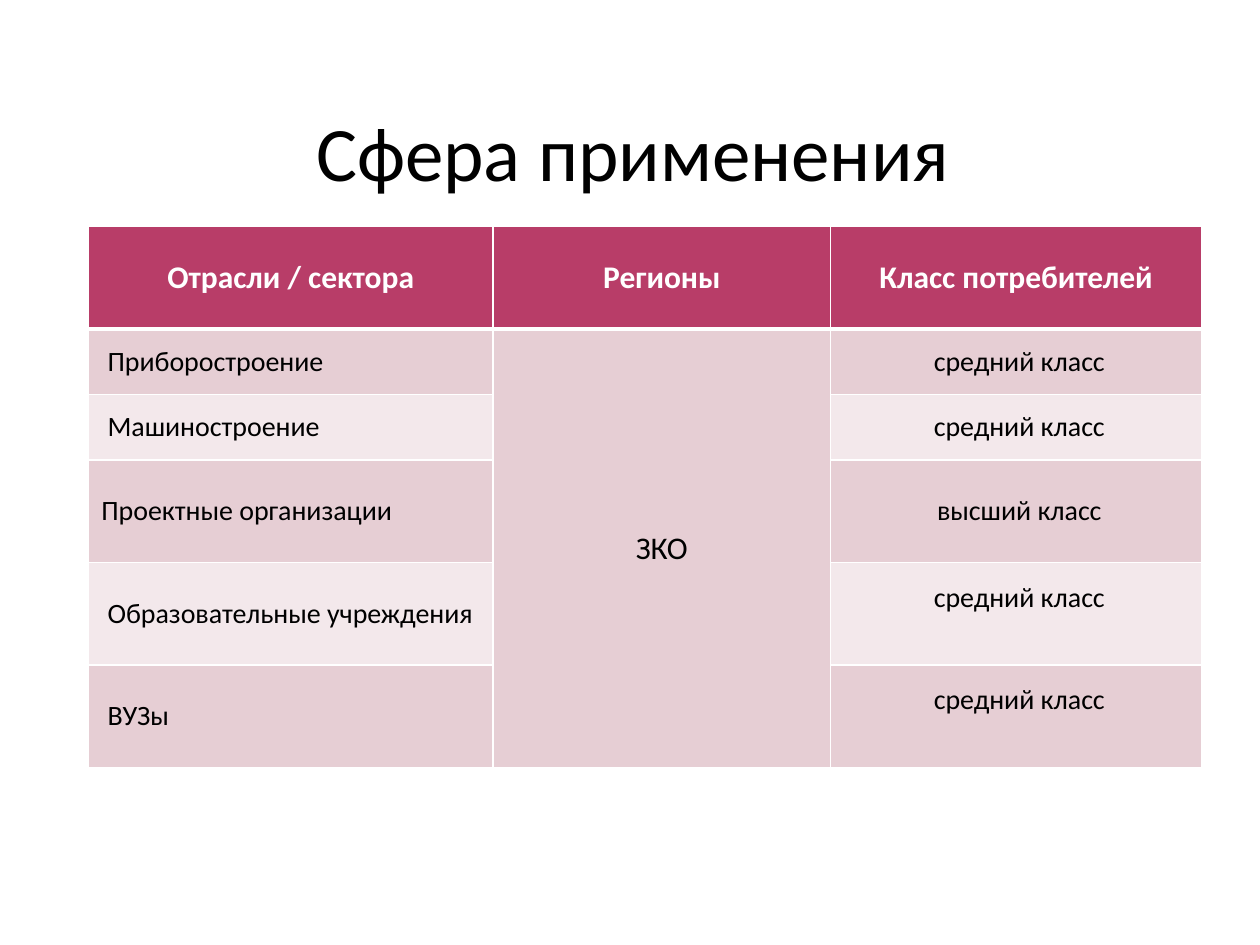
"""Build a slide with a table of fields of use."""
from typing import NamedTuple

from lxml import etree
from pptx import Presentation
from pptx.dml.color import RGBColor
from pptx.enum.text import MSO_ANCHOR, PP_ALIGN
from pptx.oxml.ns import qn
from pptx.util import Pt

LEFT, MID = PP_ALIGN.LEFT, PP_ALIGN.CENTER
CENTER = MSO_ANCHOR.MIDDLE
BLACK = RGBColor(0x00, 0x00, 0x00)
WHITE = RGBColor(0xFF, 0xFF, 0xFF)
ROSE = RGBColor(0xB8, 0x3D, 0x68)
PINK = RGBColor(0xE6, 0xCE, 0xD4)
PALE = RGBColor(0xF3, 0xE8, 0xEB)
FONT = "Calibri"
PAD, INDENT, LIFT = 7.2, 10.8, 22
COLS = (231, 193, 212)
HEAD = ("Отрасли / сектора", "Регионы", "Класс потребителей")
REGION = "ЗКО"
TALL, LOW = 58.6, 37.4


class Sector(NamedTuple):
    """One branch and its class of buyer."""

    name: str
    rank: str
    high: float
    indent: float = INDENT
    base: float = 3.6


SECTORS = (
    Sector("Приборостроение", "средний класс", LOW),
    Sector("Машиностроение", "средний класс", LOW),
    Sector("Проектные организации", "высший класс", TALL, indent=PAD),
    Sector("Образовательные учреждения", "средний класс", TALL, base=LIFT),
    Sector("ВУЗы", "средний класс", TALL, base=LIFT),
)


def write(frame, text: str, *, size=16, color=BLACK, bold=False, align=MID) -> None:
    """Write one formatted paragraph into a text frame."""
    para = frame.paragraphs[0]
    para.alignment = align
    run = para.add_run()
    run.text = text
    font = run.font
    font.name, font.size, font.bold = FONT, Pt(size), bold
    font.color.rgb = color


def edge(cell, top: float = 1, bottom: float = 1) -> None:
    """Give a cell white borders."""
    props = cell._tc.get_or_add_tcPr()
    sides = (("L", 1), ("R", 1), ("T", top), ("B", bottom))
    for spot, (side, width) in enumerate(sides):
        line = etree.Element(qn(f"a:ln{side}"), w=str(Pt(width)))
        fill = etree.SubElement(line, qn("a:solidFill"))
        etree.SubElement(fill, qn("a:srgbClr"), val=str(WHITE))
        props.insert(spot, line)


def style(cell, fill: RGBColor, *, left=PAD, base=3.6, top=1, bottom=1) -> None:
    """Set the fill, margins and borders of a cell."""
    cell.fill.solid()
    cell.fill.fore_color.rgb = fill
    cell.vertical_anchor = CENTER
    cell.margin_left, cell.margin_bottom = Pt(left), Pt(base)
    edge(cell, top, bottom)


def title(slide) -> None:
    """Add the slide title."""
    box = slide.shapes.add_textbox(Pt(39.6), Pt(44.64), Pt(644.4), Pt(82.8))
    frame = box.text_frame
    frame.word_wrap = True
    frame.vertical_anchor = CENTER
    write(frame, "Сфера применения", size=44)


def grid(slide) -> None:
    """Add the table of sectors, region and classes."""
    highs = [TALL] + [sector.high for sector in SECTORS]
    shape = slide.shapes.add_table(
        len(highs), len(COLS), Pt(50.7), Pt(129.4), Pt(sum(COLS)), Pt(sum(highs))
    )
    table = shape.table
    for col, width in zip(table.columns, COLS):
        col.width = Pt(width)
    for row, high in zip(table.rows, highs):
        row.height = Pt(high)
    for col, text in enumerate(HEAD):
        cell = table.cell(0, col)
        style(cell, ROSE, bottom=3)
        write(cell.text_frame, text, size=18, color=WHITE, bold=True)
    for row, sector in enumerate(SECTORS, 1):
        fill = PINK if row % 2 else PALE
        top = 3 if row == 1 else 1
        name, region, rank = (table.cell(row, col) for col in range(len(COLS)))
        style(name, fill, left=sector.indent, top=top)
        style(region, PINK, top=top)
        style(rank, fill, left=INDENT, base=sector.base, top=top)
        write(name.text_frame, sector.name, align=LEFT)
        write(rank.text_frame, sector.rank)
    region = table.cell(1, 1)
    region.merge(table.cell(len(SECTORS), 1))
    write(region.text_frame, REGION, size=18)


def main() -> None:
    """Build and save the deck."""
    deck = Presentation()
    deck.slide_width, deck.slide_height = Pt(720), Pt(540)
    slide = deck.slides.add_slide(deck.slide_layouts[6])
    title(slide)
    grid(slide)
    deck.save("out.pptx")


if __name__ == "__main__":
    main()
